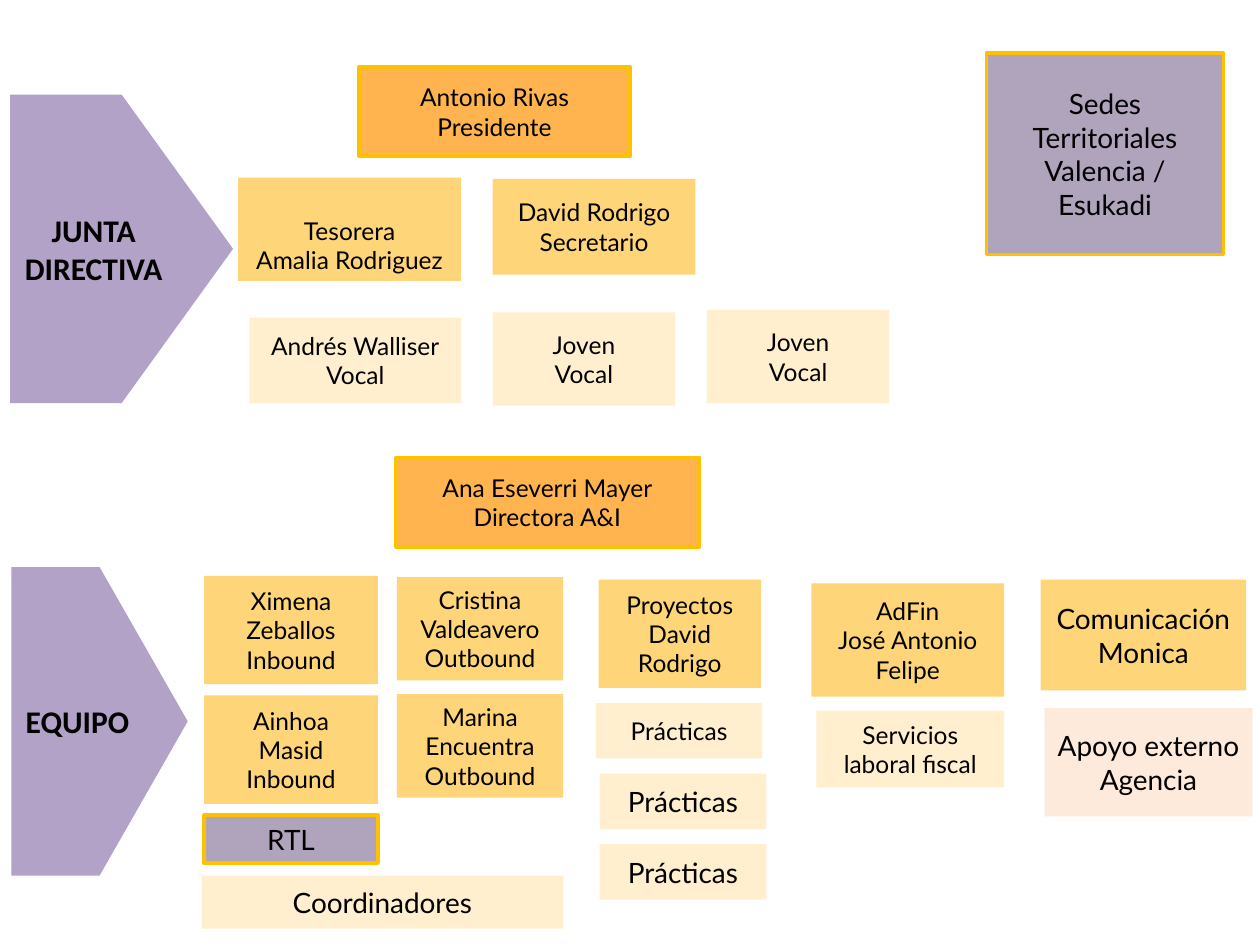
"""Build the organisation chart of the board and the team."""
from lxml import etree
from pptx import Presentation
from pptx.dml.color import RGBColor
from pptx.enum.shapes import MSO_SHAPE as Shape
from pptx.enum.text import MSO_ANCHOR as Anchor, PP_ALIGN as Align
from pptx.oxml.ns import qn
from pptx.util import Inches, Pt

COLORS = {
    "orange": "FF9300",
    "yellow": "FFD579",
    "plum": "604A7B",
    "lilac": "B3A2C7",
    "peach": "FDEADA",
    "gold": "FFC000",
    "black": "000000",
}

# Role: fill colour, opacity in percent, gold border
ROLES = {
    "head": ("orange", 69, True),
    "lead": ("yellow", 100, False),
    "support": ("yellow", 36, False),
    "site": ("plum", 50, True),
    "agency": ("peach", 100, False),
    "section": ("lilac", 100, False),
}

SECTIONS = [
    ("JUNTA DIRECTIVA", 0.08, 0.75, 1.77),
    ("EQUIPO", 0.09, 4.5, 1.4),
]

BOARD = [
    ("head", 14, (2.85, 0.53, 2.15, 0.71), ["Antonio Rivas", "Presidente"]),
    ("lead", 14, (3.91, 1.42, 1.61, 0.76), ["David Rodrigo", "Secretario"]),
    ("support", 14, (1.98, 2.52, 1.68, 0.68), ["Andrés Walliser", "Vocal"]),
    ("support", 14, (3.91, 2.48, 1.45, 0.74), ["Joven", "Vocal"]),
    ("support", 14, (5.61, 2.46, 1.45, 0.74), ["Joven", "Vocal"]),
    ("site", 16, (7.83, 0.42, 1.88, 1.6), ["Sedes Territoriales", "Valencia / Esukadi"]),
]

TEAM = [
    ("head", 14, (3.14, 3.63, 2.41, 0.71), ["Ana Eseverri Mayer", "Directora A&I"]),
    ("lead", 14, (1.62, 4.57, 1.38, 0.86), ["Ximena Zeballos", "Inbound"]),
    ("lead", 14, (1.62, 5.52, 1.38, 0.86), ["Ainhoa", "Masid", "Inbound"]),
    ("site", 16, (1.62, 6.47, 1.38, 0.38), ["RTL"]),
    ("lead", 14, (3.15, 4.58, 1.32, 0.82), ["Cristina", "Valdeavero", "Outbound"]),
    ("lead", 14, (3.15, 5.51, 1.32, 0.82), ["Marina Encuentra", "Outbound"]),
    ("support", 16, (1.6, 6.95, 2.87, 0.42), ["Coordinadores"]),
    ("lead", 14, (4.75, 4.6, 1.29, 0.86), ["Proyectos", "David Rodrigo"]),
    ("lead", 14, (6.44, 4.63, 1.53, 0.9), ["AdFin", "José Antonio Felipe"]),
    ("support", 14, (6.48, 5.64, 1.49, 0.61), ["Servicios laboral fiscal"]),
    ("lead", 16, (8.26, 4.6, 1.63, 0.88), ["Comunicación", "Monica"]),
    ("agency", 16, (8.29, 5.62, 1.65, 0.86), ["Apoyo externo", "Agencia"]),
]

INTERNS = [(4.73, 14), (4.76, 16), (4.76, 16)]
INTERN_TOP, INTERN_STEP = 5.58, 0.56


def color(name):
    """Return the named colour."""
    return RGBColor.from_string(COLORS[name])


def paint(shape, role):
    """Give a shape the fill and border of its role."""
    fill_name, opacity, bordered = ROLES[role]
    shape.shadow.inherit = False
    shape.fill.solid()
    shape.fill.fore_color.rgb = color(fill_name)
    if opacity < 100:
        hue = shape.fill._xPr.find(".//" + qn("a:srgbClr"))
        etree.SubElement(hue, qn("a:alpha"), val=str(opacity * 1000))
    if bordered:
        shape.line.color.rgb = color("gold")
        shape.line.width = Pt(2)
    else:
        shape.line.fill.background()


def write(shape, lines, size, font_name, bold=False, anchor=Anchor.MIDDLE):
    """Write centred black lines inside a shape."""
    frame = shape.text_frame
    frame.word_wrap = True
    frame.vertical_anchor = anchor
    frame.text = "\n".join(lines)
    for paragraph in frame.paragraphs:
        paragraph.alignment = Align.CENTER
        for run in paragraph.runs:
            run.font.name = font_name
            run.font.size = Pt(size)
            run.font.bold = bold
            run.font.color.rgb = color("black")


def add_post(slide, role, size, box, lines, anchor=Anchor.MIDDLE):
    """Add one box of the chart."""
    post = slide.shapes.add_shape(Shape.RECTANGLE, *map(Inches, box))
    paint(post, role)
    write(post, lines, size, "Lato", anchor=anchor)


def add_section(slide, title, left, top, width):
    """Add the arrow that names a section."""
    arrow = slide.shapes.add_shape(
        Shape.PENTAGON, Inches(left), Inches(top), Inches(width), Inches(2.45)
    )
    paint(arrow, "section")
    write(arrow, [title], 18, "Calibri", bold=True)


def main():
    """Build and save the slide."""
    deck = Presentation()
    deck.slide_width, deck.slide_height = Inches(10), Inches(7.5)
    slide = deck.slides.add_slide(deck.slide_layouts[6])
    for section in SECTIONS:
        add_section(slide, *section)
    for post in BOARD + TEAM:
        add_post(slide, *post)
    add_post(slide, "lead", 14, (1.89, 1.41, 1.77, 0.82),
             ["Tesorera", "Amalia Rodriguez"], anchor=Anchor.BOTTOM)
    for row, (left, size) in enumerate(INTERNS):
        top = INTERN_TOP + row * INTERN_STEP
        add_post(slide, "support", size, (left, top, 1.32, 0.44), ["Prácticas"])
    deck.save("out.pptx")


if __name__ == "__main__":
    main()
